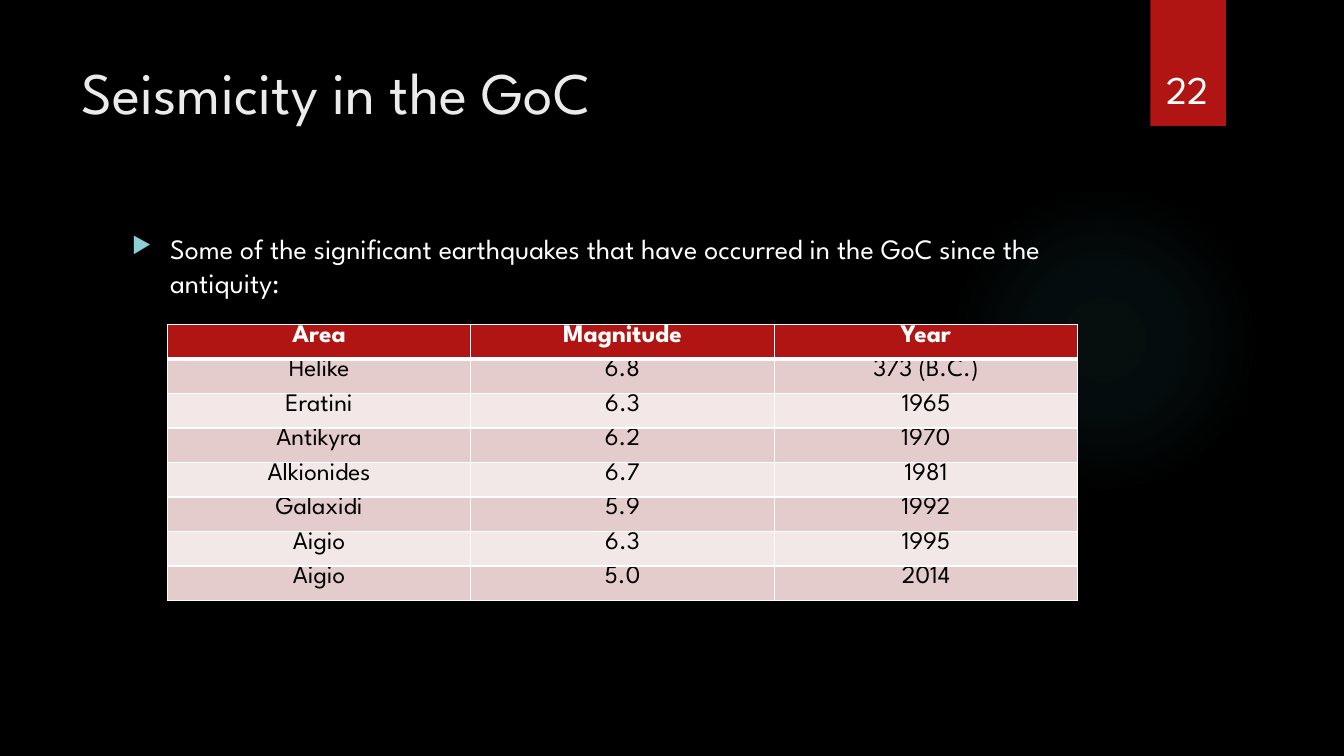
from dataclasses import dataclass

from lxml.etree import SubElement
from pptx import Presentation
from pptx.dml.color import RGBColor
from pptx.enum.shapes import MSO_SHAPE
from pptx.enum.text import MSO_ANCHOR, PP_ALIGN
from pptx.oxml import parse_xml
from pptx.oxml.ns import nsdecls, qn
from pptx.util import Inches, Pt

FONT = "League Spartan"
COLORS = {
    "background": "000000",
    "glow": "50B9C1",
    "accent": "B01513",
    "title": "EBEBEB",
    "white": "FFFFFF",
    "black": "000000",
    "bullet": "8AD0D6",
    "odd_row": "E4CCCC",
    "even_row": "F2E8E7",
}
GLOW_STOPS = ((0, 7), (36, 6), (69, 0))
HEADINGS = ("Area", "Magnitude", "Year")
EARTHQUAKES = (
    ("Helike", "6.8", "373 (B.C.)"),
    ("Eratini", "6.3", "1965"),
    ("Antikyra", "6.2", "1970"),
    ("Alkionides", "6.7", "1981"),
    ("Galaxidi", "5.9", "1992"),
    ("Aigio", "6.3", "1995"),
    ("Aigio", "5.0", "2014"),
)
COLUMN_WIDTH = 3.01
ROW_HEIGHT = 0.3425


@dataclass
class Label:
    text: str
    left: float
    top: float
    width: float
    height: float
    size: int
    color: str
    align: PP_ALIGN = PP_ALIGN.LEFT
    anchor: MSO_ANCHOR = MSO_ANCHOR.TOP
    bulleted: bool = False


LABELS = (
    Label("Seismicity in the GoC", 0.71, 0.5, 10.29, 1.53, 42, "title"),
    Label("Some of the significant earthquakes that have occurred in the GoC since the antiquity:",
          1.21, 2.25, 9.78, 4.59, 20, "white", bulleted=True),
    Label("22", 11.32, 0.32, 0.92, 0.84, 28, "white", PP_ALIGN.CENTER, MSO_ANCHOR.BOTTOM),
)


def rgb(name: str) -> RGBColor:
    return RGBColor.from_string(COLORS[name])


def style_text(paragraph, size: int, color: str, bold: bool = False) -> None:
    font = paragraph.font
    font.name, font.size, font.bold = FONT, Pt(size), bold
    font.color.rgb = rgb(color)


def add_plain_shape(slide, kind: MSO_SHAPE, left: float, top: float, width: float, height: float):
    shape = slide.shapes.add_shape(kind, Inches(left), Inches(top), Inches(width), Inches(height))
    shape.shadow.inherit = False
    shape.line.fill.background()
    return shape


def add_glow(slide) -> None:
    shape = add_plain_shape(slide, MSO_SHAPE.OVAL, 9.41, 1.83, 3.08, 3.08)
    stops = "".join(
        f'<a:gs pos="{position * 1000}"><a:srgbClr val="{COLORS["glow"]}">'
        f'<a:alpha val="{opacity * 1000}"/></a:srgbClr></a:gs>'
        for position, opacity in GLOW_STOPS
    )
    gradient = parse_xml(
        f'<a:gradFill {nsdecls("a")}><a:gsLst>{stops}</a:gsLst><a:path path="circle">'
        '<a:fillToRect l="50000" t="50000" r="50000" b="50000"/></a:path></a:gradFill>'
    )
    shape.element.spPr.find(qn("a:prstGeom")).addnext(gradient)


def add_bullet(paragraph) -> None:
    properties = paragraph._p.get_or_add_pPr()
    properties.set("marL", str(Inches(0.38)))
    properties.set("indent", str(-Inches(0.38)))
    color = SubElement(properties, qn("a:buClr"))
    SubElement(color, qn("a:srgbClr"), val=COLORS["bullet"])
    SubElement(properties, qn("a:buSzPct"), val="80000")
    SubElement(properties, qn("a:buChar"), char="▶")


def add_label(slide, label: Label) -> None:
    box = slide.shapes.add_textbox(
        Inches(label.left), Inches(label.top), Inches(label.width), Inches(label.height))
    frame = box.text_frame
    frame.word_wrap = True
    frame.vertical_anchor = label.anchor
    paragraph = frame.paragraphs[0]
    paragraph.text = label.text
    paragraph.alignment = label.align
    if label.bulleted:
        add_bullet(paragraph)
    style_text(paragraph, label.size, label.color)


def add_borders(cell, header: bool, below_header: bool) -> None:
    widths = {"lnL": 1, "lnR": 1, "lnT": 3 if below_header else 1, "lnB": 3 if header else 1}
    properties = cell._tc.get_or_add_tcPr()
    for side, width in widths.items():
        line = SubElement(properties, qn(f"a:{side}"), w=str(Pt(width)))
        fill = SubElement(line, qn("a:solidFill"))
        SubElement(fill, qn("a:srgbClr"), val=COLORS["white"])


def add_earthquake_table(slide) -> None:
    rows = (HEADINGS, *EARTHQUAKES)
    table = slide.shapes.add_table(
        len(rows), len(HEADINGS), Inches(1.66), Inches(3.22),
        Inches(COLUMN_WIDTH * len(HEADINGS)), Inches(ROW_HEIGHT * len(rows))).table
    for row_index, values in enumerate(rows):
        header = row_index == 0
        fill = "accent" if header else "odd_row" if row_index % 2 else "even_row"
        for column_index, value in enumerate(values):
            cell = table.cell(row_index, column_index)
            cell.margin_top = cell.margin_bottom = 0
            add_borders(cell, header, row_index == 1)
            cell.fill.solid()
            cell.fill.fore_color.rgb = rgb(fill)
            paragraph = cell.text_frame.paragraphs[0]
            paragraph.text = value
            paragraph.alignment = PP_ALIGN.CENTER
            style_text(paragraph, 18, "white" if header else "black", header)


def main() -> None:
    presentation = Presentation()
    presentation.slide_width = Inches(13.33)
    presentation.slide_height = Inches(7.5)
    slide = presentation.slides.add_slide(presentation.slide_layouts[6])
    slide.background.fill.solid()
    slide.background.fill.fore_color.rgb = rgb("background")
    add_glow(slide)
    page_tab = add_plain_shape(slide, MSO_SHAPE.RECTANGLE, 11.41, 0, 0.75, 1.25)
    page_tab.fill.solid()
    page_tab.fill.fore_color.rgb = rgb("accent")
    for label in LABELS:
        add_label(slide, label)
    add_earthquake_table(slide)
    presentation.save("out.pptx")


if __name__ == "__main__":
    main()
